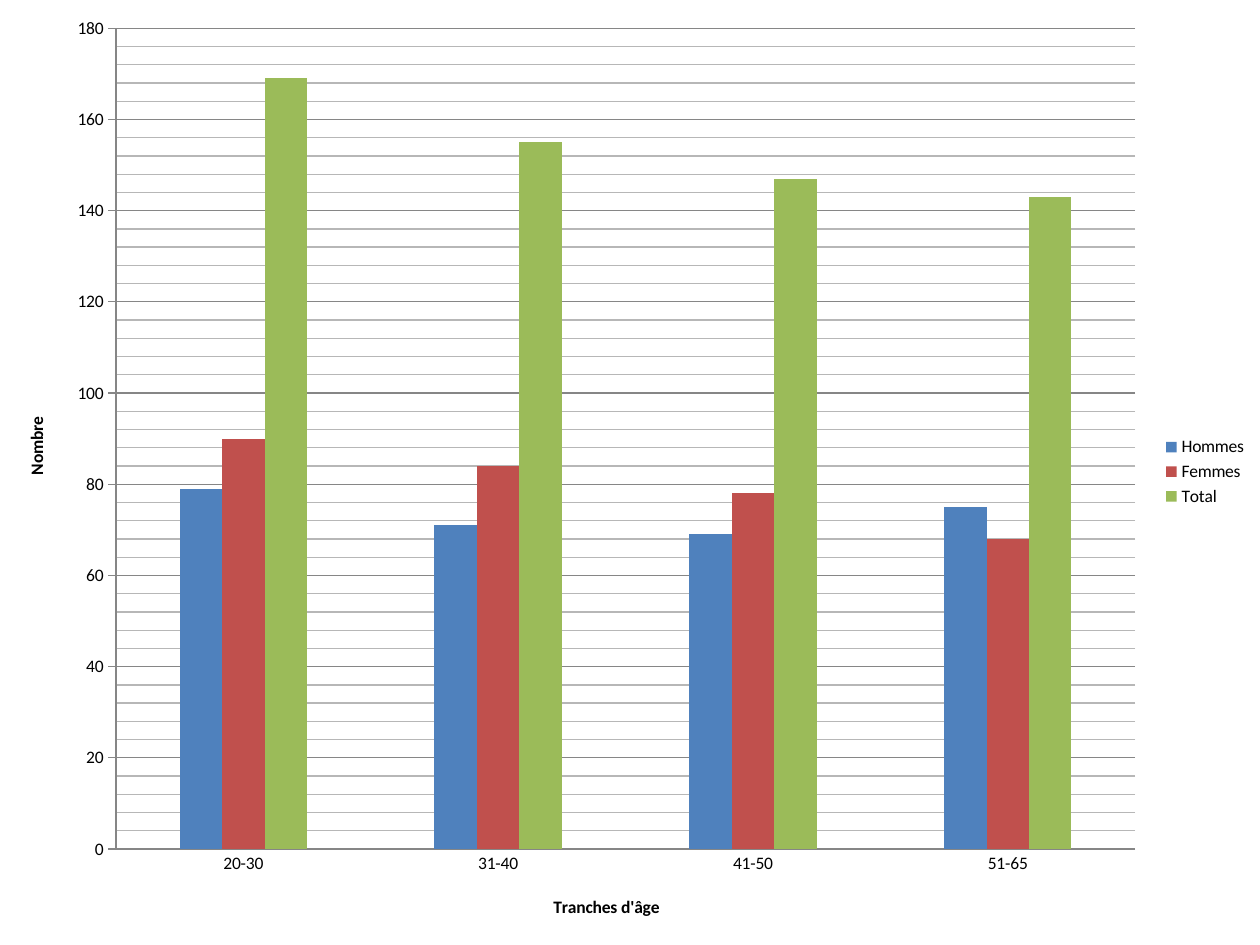
from dataclasses import dataclass

from lxml.etree import SubElement
from pptx import Presentation
from pptx.chart.axis import CategoryAxis, ValueAxis
from pptx.chart.chart import Chart
from pptx.chart.data import CategoryChartData
from pptx.dml.color import RGBColor
from pptx.enum.chart import XL_CHART_TYPE, XL_LEGEND_POSITION, XL_TICK_MARK
from pptx.oxml.ns import qn
from pptx.util import Cm, Pt


@dataclass(frozen=True)
class Theme:
    font: str = "Calibri"
    text_size: float = 10
    line_width: float = 0.75
    text: str = "000000"
    axis: str = "868686"
    minor_grid: str = "B7B7B7"


@dataclass(frozen=True)
class AgeSeries:
    name: str
    values: tuple[int, ...]
    color: str


THEME = Theme()
AGE_GROUPS = ("20-30", "31-40", "41-50", "51-65")
SERIES = (
    AgeSeries("Hommes", (79, 71, 69, 75), "4F81BD"),
    AgeSeries("Femmes", (90, 84, 78, 68), "C0504D"),
    AgeSeries("Total", (169, 155, 147, 143), "9BBB59"),
)
# Fractions of the chart area
PLOT_LAYOUT = {"x": 0.092, "y": 0.03, "w": 0.809, "h": 0.87}
VALUE_AXIS_FORMAT = {
    "minimum_scale": 0,
    "maximum_scale": 180,
    "major_unit": 20,
    "minor_unit": 4,
    "has_major_gridlines": True,
    "has_minor_gridlines": True,
    "major_tick_mark": XL_TICK_MARK.OUTSIDE,
    "minor_tick_mark": XL_TICK_MARK.NONE,
}
CATEGORY_AXIS_FORMAT = {
    "has_major_gridlines": False,
    "major_tick_mark": XL_TICK_MARK.NONE,
    "minor_tick_mark": XL_TICK_MARK.NONE,
}
LEGEND_FORMAT = {
    "position": XL_LEGEND_POSITION.RIGHT,
    "include_in_layout": False,
}


def apply_format(target: object, values: dict) -> None:
    for name, value in values.items():
        setattr(target, name, value)


def style_font(font: object, bold: bool = False) -> None:
    apply_format(font, {"name": THEME.font, "size": Pt(THEME.text_size), "bold": bold})
    font.color.rgb = RGBColor.from_string(THEME.text)


def style_line(line: object, color: str) -> None:
    line.width = Pt(THEME.line_width)
    line.color.rgb = RGBColor.from_string(color)


def style_minor_gridlines(axis: ValueAxis) -> None:
    gridlines = axis._element.find(qn("c:minorGridlines"))
    properties = SubElement(gridlines, qn("c:spPr"))
    line = SubElement(properties, qn("a:ln"), w=str(Pt(THEME.line_width)))
    fill = SubElement(line, qn("a:solidFill"))
    SubElement(fill, qn("a:srgbClr"), val=THEME.minor_grid)


def style_axis(axis: CategoryAxis | ValueAxis, title: str, values: dict) -> None:
    apply_format(axis, values)
    style_line(axis.format.line, THEME.axis)
    text_frame = axis.axis_title.text_frame
    text_frame.text = title
    style_font(text_frame.paragraphs[0].runs[0].font, bold=True)


def place_plot(chart: Chart) -> None:
    """Fix the inner plot area at the fractions of PLOT_LAYOUT."""
    plot_area = chart.plots[0]._element.getparent()
    for layout in plot_area.findall(qn("c:layout")):
        plot_area.remove(layout)
    layout = SubElement(plot_area, qn("c:layout"))
    plot_area.insert(0, layout)
    manual = SubElement(layout, qn("c:manualLayout"))
    settings = {"layoutTarget": "inner", "xMode": "edge", "yMode": "edge", **PLOT_LAYOUT}
    for name, value in settings.items():
        SubElement(manual, qn(f"c:{name}")).set("val", str(value))


def add_age_chart(slide: object) -> None:
    data = CategoryChartData()
    data.categories = AGE_GROUPS
    for series in SERIES:
        data.add_series(series.name, series.values)
    chart = slide.shapes.add_chart(
        XL_CHART_TYPE.COLUMN_CLUSTERED, Cm(0), Cm(0), Cm(25.4), Cm(19.02), data
    ).chart
    apply_format(chart, {"has_title": False, "has_legend": True})
    style_font(chart.font)
    apply_format(chart.legend, LEGEND_FORMAT)

    plot = chart.plots[0]
    apply_format(plot, {"gap_width": 300, "overlap": 0, "vary_by_categories": False})
    for drawn, series in zip(plot.series, SERIES):
        drawn.format.fill.solid()
        drawn.format.fill.fore_color.rgb = RGBColor.from_string(series.color)

    style_axis(chart.category_axis, "Tranches d'âge", CATEGORY_AXIS_FORMAT)
    style_axis(chart.value_axis, "Nombre", VALUE_AXIS_FORMAT)
    style_line(chart.value_axis.major_gridlines.format.line, THEME.axis)
    style_minor_gridlines(chart.value_axis)
    place_plot(chart)


def main() -> None:
    presentation = Presentation()
    apply_format(presentation, {"slide_width": Cm(25.4), "slide_height": Cm(19.05)})
    slide = presentation.slides.add_slide(presentation.slide_layouts[6])
    add_age_chart(slide)
    presentation.save("out.pptx")


if __name__ == "__main__":
    main()
